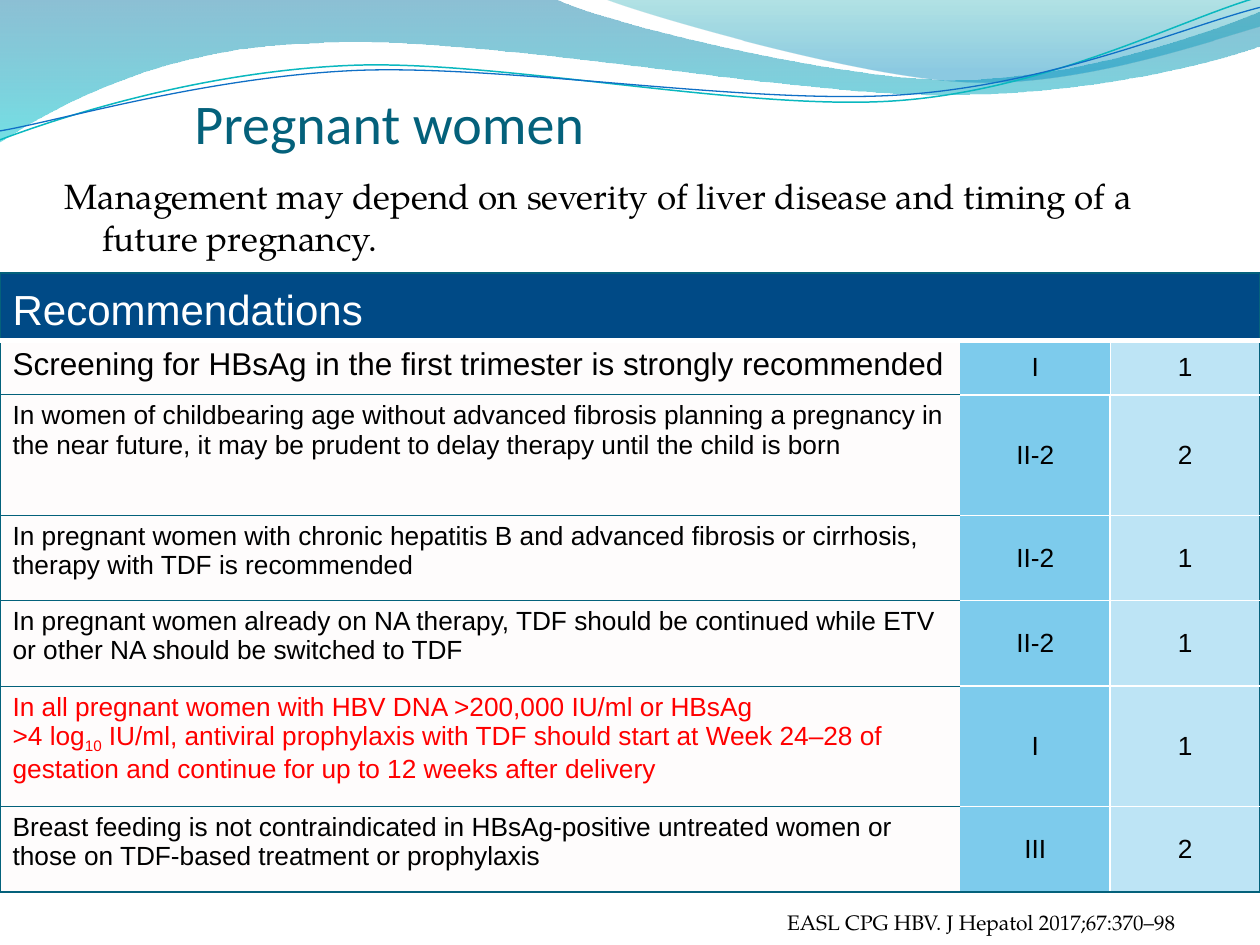
from lxml.etree import SubElement
from pptx import Presentation
from pptx.dml.color import RGBColor
from pptx.enum.text import MSO_ANCHOR as Anchor, PP_ALIGN as Align
from pptx.oxml.ns import qn
from pptx.util import Cm, Pt

COLORS = {
    "teal": "04617B", "navy": "004A86", "white": "FFFFFF", "black": "000000",
    "red": "FF0000", "paper": "FEFCFC", "sky": "7DCBEC",
    "wave_blue": "0074A1", "wave_cyan": "00C6CF",
    "crest_green": "00A1A9", "crest_blue": "008BBF",
    "line_cyan": "0AB8BF", "line_blue": "0F6FC6",
}
SERIF = "TeX Gyre Pagella"

BACK_WAVE = [
    [(11.18, -0.03)],
    [(12.09, 0.43), (16.87, 1.6), (19.25, 1.6)],
    [(21.67, 1.6), (24.33, 0.66), (25.4, 0.23)],
    [(25.43, 0.91)],
    [(24.97, 1.12), (22.1, 1.93), (18.95, 1.91)],
    [(15.8, 1.91), (9.7, 0.71), (6.53, 0.86)],
    [(3.28, 0.91), (1.17, 2.11), (-0.03, 2.87)],
    [(0, 0)],
]
CREST = [
    [(12.93, 0.28), (17.32, 1.57), (19.53, 1.65)],
    [(21.74, 1.75), (24.41, 0.81), (25.4, 0.53)],
    [(25.4, 0)],
    [(12.17, -0.03)],
]
CYAN_LINE = [
    [(1.22, 2.36), (4.01, 1.45), (7.04, 1.32)],
    [(10.03, 1.19), (15.06, 2.26), (18.11, 2.03)],
    [(21.16, 1.8), (23.83, 0.38), (25.35, -0.05)],
]
BLUE_LINE = [
    [(1.19, 2.44), (4.17, 1.55), (7.19, 1.42)],
    [(10.24, 1.3), (15.16, 2.13), (18.21, 1.91)],
    [(21.23, 1.7), (23.9, 0.53), (25.4, 0.15)],
]

COLUMN_WIDTHS = [19.36, 3.02, 3.02]
ROW_HEIGHTS = [1.37, 1.09, 2.43, 1.72, 1.72, 2.43, 1.72]
RECOMMENDATIONS = [
    ("Screening for HBsAg in the first trimester is strongly recommended", "I", "1"),
    ("In women of childbearing age without advanced fibrosis planning a pregnancy in "
     "the near future, it may be prudent to delay therapy until the child is born", "II-2", "2"),
    ("In pregnant women with chronic hepatitis B and advanced fibrosis or cirrhosis, "
     "therapy with TDF is recommended", "II-2", "1"),
    ("In pregnant women already on NA therapy, TDF should be continued while ETV "
     "or other NA should be switched to TDF", "II-2", "1"),
    ("In all pregnant women with HBV DNA >200,000 IU/ml or HBsAg \v>4 log", "I", "1"),
    ("Breast feeding is not contraindicated in HBsAg-positive untreated women or "
     "those on TDF-based treatment or prophylaxis", "III", "2"),
]
PROPHYLAXIS_ROW = 5
PROPHYLAXIS_END = (" IU/ml, antiviral prophylaxis with TDF should start at Week 24–28 of "
                   "gestation and continue for up to 12 weeks after delivery")


def rgb(name):
    return RGBColor.from_string(COLORS[name])


def set_alpha(color_element, percent):
    SubElement(color_element, qn("a:alpha")).set("val", str(percent * 1000))


def bend_segments(shape, segments):
    outline = next(shape._element.iter(qn("a:path")))
    vertices = iter(outline.findall(qn("a:lnTo")))
    for segment in segments:
        vertex = next(vertices)
        if len(segment) == 1:
            continue
        vertex.addprevious(curve := outline.makeelement(qn("a:cubicBezTo")))
        for corner in (vertex, next(vertices), next(vertices)):
            curve.append(corner[0])
            outline.remove(corner)


def add_curve(slide, start, segments, close):
    builder = slide.shapes.build_freeform(Cm(start[0]), Cm(start[1]), scale=1.0)
    points = [(Cm(x), Cm(y)) for segment in segments for x, y in segment]
    builder.add_line_segments(points, close=close)
    shape = builder.convert_to_shape()
    bend_segments(shape, segments)
    shape.shadow.inherit = False
    return shape


def add_wave(slide, start, segments, stops):
    shape = add_curve(slide, start, segments, True)
    shape.line.fill.background()
    shape.fill.gradient()
    shape.fill.gradient_angle = 270
    for stop, (position, color, opacity) in zip(shape.fill.gradient_stops, stops):
        stop.position = position
        stop.color.rgb = rgb(color)
        set_alpha(stop._gs.find(qn("a:srgbClr")), opacity)


def add_wave_line(slide, start, segments, color, width):
    shape = add_curve(slide, start, segments, False)
    shape.fill.background()
    shape.line.color.rgb = rgb(color)
    shape.line.width = Pt(width)


def format_runs(paragraph, font, size, color):
    for run in paragraph.runs:
        run.font.name = font
        run.font.size = Pt(size)
        run.font.color.rgb = rgb(color)


def add_text(slide, box, text, font, size, color, anchor=Anchor.TOP):
    text_frame = slide.shapes.add_textbox(*map(Cm, box)).text_frame
    text_frame.word_wrap = True
    text_frame.vertical_anchor = anchor
    text_frame.text = text
    format_runs(text_frame.paragraphs[0], font, size, color)
    return text_frame


def set_borders(cell, **borders):
    properties = cell._tc.get_or_add_tcPr()
    for index, side in enumerate("LRTB"):
        line = SubElement(properties, qn(f"a:ln{side}"))
        properties.insert(index, line)
        if side not in borders:
            SubElement(line, qn("a:noFill"))
            continue
        color, width = borders[side]
        line.set("w", str(Pt(width)))
        fill = SubElement(line, qn("a:solidFill"))
        SubElement(fill, qn("a:srgbClr")).set("val", COLORS[color])


def fill_cell(cell, text, size, color, fill, anchor=Anchor.TOP, align=Align.LEFT):
    cell.fill.solid()
    cell.fill.fore_color.rgb = rgb(fill)
    cell.vertical_anchor = anchor
    cell.text_frame.text = text
    paragraph = cell.text_frame.paragraphs[0]
    paragraph.alignment = align
    format_runs(paragraph, "Arial", size, color)
    return paragraph


def add_header(table):
    cell = table.cell(0, 0)
    cell.merge(table.cell(0, 2))
    fill_cell(cell, "Recommendations", 24, "white", "navy", Anchor.BOTTOM)
    for column in range(3):
        set_borders(table.cell(0, column), L=("teal", 1), R=("teal", 1),
                    T=("teal", 1), B=("white", 3))


def add_recommendation(table, row, text, evidence, grade):
    first, last = row == 1, row == len(RECOMMENDATIONS)
    color = "red" if row == PROPHYLAXIS_ROW else "black"
    size = 18 if first else 15
    cell = table.cell(row, 0)
    paragraph = fill_cell(cell, text, size, color, "paper")
    if row == PROPHYLAXIS_ROW:
        subscript = paragraph.add_run()
        subscript.text = "10"
        paragraph.add_run().text = PROPHYLAXIS_END
        format_runs(paragraph, "Arial", size, color)
        subscript.font._element.set("baseline", "-25000")
    set_borders(cell, L=("teal", 1), T=("white", 1) if first else ("teal", 0.5),
                B=("teal", 1 if last else 0.5))

    top = ("white", 3 if first else 1)
    bottom = ("teal" if last else "white", 1)
    inner = ("white", 0.5 if first else 1)
    evidence_cell, grade_cell = table.cell(row, 1), table.cell(row, 2)
    for cell, value in ((evidence_cell, evidence), (grade_cell, grade)):
        fill_cell(cell, value, 15, "black", "sky", Anchor.MIDDLE, Align.CENTER)
    set_alpha(grade_cell._tc.tcPr.find(qn("a:solidFill"))[0], 50)
    set_borders(evidence_cell, R=inner, T=top, B=bottom)
    set_borders(grade_cell, L=inner, R=("teal", 1), T=top, B=bottom)


def add_recommendations(slide):
    table = slide.shapes.add_table(
        len(ROW_HEIGHTS), len(COLUMN_WIDTHS), Cm(0), Cm(5.5),
        Cm(sum(COLUMN_WIDTHS)), Cm(sum(ROW_HEIGHTS))).table
    table.first_row = table.horz_banding = False
    for column, width in zip(table.columns, COLUMN_WIDTHS):
        column.width = Cm(width)
    for row, height in zip(table.rows, ROW_HEIGHTS):
        row.height = Cm(height)
    add_header(table)
    for row, recommendation in enumerate(RECOMMENDATIONS, 1):
        add_recommendation(table, row, *recommendation)


def main():
    presentation = Presentation()
    presentation.slide_width, presentation.slide_height = Cm(25.4), Cm(19.05)
    slide = presentation.slides.add_slide(presentation.slide_layouts[6])

    add_wave(slide, (0, 0), BACK_WAVE, [(0, "wave_blue", 45), (1, "wave_cyan", 55)])
    add_wave(slide, (12.17, -0.03), CREST, [(0, "crest_green", 30), (0.8, "crest_blue", 45)])
    add_wave_line(slide, (0, 2.82), CYAN_LINE, "line_cyan", 0.85)
    add_wave_line(slide, (0, 2.64), BLUE_LINE, "line_blue", 0.75)

    title = add_text(slide, (1.07, 0, 22.86, 3.18), "Pregnant women",
                     "Calibri", 32, "teal", Anchor.BOTTOM)
    title.margin_left, title.margin_bottom = Cm(2.85), Cm(0.04)

    source = add_text(slide, (0.03, 18.01, 25.37, 1.04),
                      "EASL CPG HBV. J Hepatol 2017;67:370–98", SERIF, 12, "black", Anchor.BOTTOM)
    source.margin_right, source.margin_bottom = Cm(1.7), Cm(0.2)
    source.paragraphs[0].alignment = Align.RIGHT

    summary = add_text(slide, (1.05, 3.4, 23.62, 2.11),
                       "Management may depend on severity of liver disease and timing of a "
                       "future pregnancy.", SERIF, 20, "black")
    paragraph = summary.paragraphs[0]
    paragraph.space_before = Pt(4)
    properties = paragraph._p.get_or_add_pPr()
    properties.set("marL", str(Cm(0.76)))
    properties.set("indent", str(Cm(-0.76)))

    add_recommendations(slide)
    presentation.save("out.pptx")


if __name__ == "__main__":
    main()
